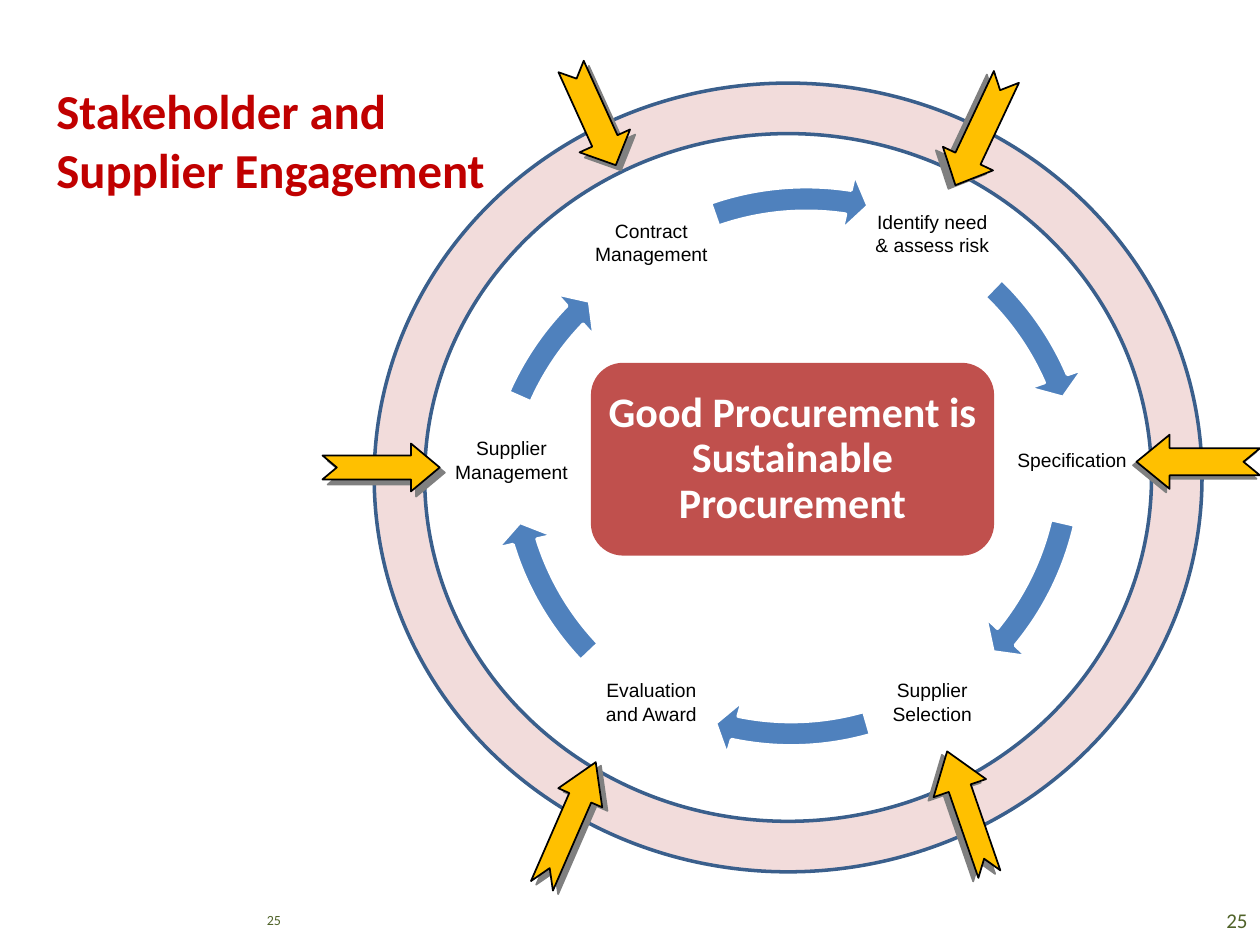
from lxml.etree import SubElement
from pptx import Presentation
from pptx.dml.color import RGBColor
from pptx.enum.shapes import MSO_SHAPE
from pptx.enum.text import MSO_ANCHOR, PP_ALIGN
from pptx.oxml.ns import qn
from pptx.util import Inches, Pt

TITLE = "Stakeholder and\vSupplier Engagement"
CORE_MESSAGE = "Good Procurement is Sustainable Procurement"
PAGE_NUMBER = "25"

STAGES = [
    ("Identify need & assess risk", 6.9, 1.35),
    ("Specification", 8.01, 3.15),
    ("Supplier Selection", 6.9, 5.07),
    ("Evaluation and Award", 4.67, 5.07),
    ("Supplier Management", 3.56, 3.15),
    ("Contract Management", 4.67, 1.42),
]
CYCLE_ARROWS = [
    (3.91, 1.44, 4.88, 202, 188.37),
    (3.84, 1.21, 4.88, 23.66, 7.77),
    (3.87, 1.23, 4.82, 61.1, 44.39),
    (3.84, 1.21, 4.88, 97.73, 81.84),
    (3.71, 1.6, 4.88, 134.48, 122.22),
    (3.96, 1.35, 4.88, 167.19, 150.45),
]
ENGAGEMENT_ARROWS = [
    ((2.56, 3.52, 0.93, 0.38), 0, (0.5, 0.6), 4.2, 45),
    ((4.28, 0.7, 0.86, 0.44), 65.6, (0.5, 0.48), 4.2, 45),
    ((7.31, 0.82, 0.95, 0.44), 115.2, (0.5, 0.53), 4.5, 153),
    ((9.02, 3.45, 0.98, 0.43), 180, (0.5, 0.61), 2.8, 135),
    ((7.17, 6.23, 1.03, 0.44), 251, (0.42, 0.7), 3.6, 146),
    ((3.98, 6.35, 1.07, 0.38), 293.5, (0.5, 0.81), 3.6, 34),
]

TITLE_FORMAT = {"name": "Calibri", "size": Pt(27.9), "bold": True}
CORE_FORMAT = {"name": "Calibri", "size": Pt(24), "bold": True}
STAGE_FORMAT = {"name": "Arial", "size": Pt(11)}
PAGE_FORMAT = {"name": "Calibri", "size": Pt(12)}
SMALL_PAGE_FORMAT = {"name": "Calibri", "size": Pt(8)}


def color(hex_value):
    return RGBColor.from_string(hex_value)


def write_text(shape, text, font_format, text_color, align, margins):
    frame = shape.text_frame
    horizontal, vertical = map(Inches, margins)
    frame_format = {
        "word_wrap": True,
        "vertical_anchor": MSO_ANCHOR.MIDDLE,
        "margin_left": horizontal,
        "margin_right": horizontal,
        "margin_top": vertical,
        "margin_bottom": vertical,
    }
    for name, value in frame_format.items():
        setattr(frame, name, value)
    paragraph = frame.paragraphs[0]
    paragraph.text = text
    paragraph.alignment = align
    for name, value in font_format.items():
        setattr(paragraph.font, name, value)
    paragraph.font.color.rgb = color(text_color)
    return paragraph


def add_text(slide, box, *text_options):
    shape = slide.shapes.add_textbox(*map(Inches, box))
    write_text(shape, *text_options)


def add_shape(slide, kind, box, fill, adjustments, line=None, width=1):
    shape = slide.shapes.add_shape(kind, *map(Inches, box))
    shape.shadow.inherit = False
    shape.fill.solid()
    shape.fill.fore_color.rgb = color(fill)
    for index, value in enumerate(adjustments):
        shape.adjustments[index] = value
    if line:
        shape.line.color.rgb = color(line)
        shape.line.width = Pt(width)
    else:
        shape.line.fill.background()
    return shape


def add_hard_shadow(shape, distance, angle):
    effects = shape._element.spPr.find(qn("a:effectLst"))
    shadow = SubElement(effects, qn("a:outerShdw"), {
        "dist": str(int(Pt(distance))),
        "dir": str(angle * 60000),
        "algn": "ctr",
        "rotWithShape": "0",
    })
    SubElement(shadow, qn("a:srgbClr"), val="808080")


def main():
    presentation = Presentation()
    presentation.slide_width = Inches(10)
    presentation.slide_height = Inches(7.5)
    slide = presentation.slides.add_slide(presentation.slide_layouts[6])

    add_text(slide, (9.24, 7.1, 0.76, 0.4), PAGE_NUMBER, PAGE_FORMAT,
             "4F6228", PP_ALIGN.RIGHT, (0.1, 0.05))
    add_text(slide, (0.35, 0.59, 4.66, 1.03), TITLE, TITLE_FORMAT,
             "C00000", PP_ALIGN.LEFT, (0.1, 0))
    add_text(slide, (0, 7.1, 2.33, 0.4), PAGE_NUMBER, SMALL_PAGE_FORMAT,
             "4F6228", PP_ALIGN.RIGHT, (0.1, 0.05))

    add_shape(slide, MSO_SHAPE.DONUT, (2.97, 0.66, 6.57, 6.26),
              "F2DCDB", (0.064,), "3A5F8C", 2)

    for (label, left, top), arrow in zip(STAGES, CYCLE_ARROWS):
        add_text(slide, (left, top, 1, 1), label, STAGE_FORMAT,
                 "000000", PP_ALIGN.CENTER, (0.02, 0.02))
        arrow_left, arrow_top, size, end, start = arrow
        add_shape(slide, MSO_SHAPE.CIRCULAR_ARROW, (arrow_left, arrow_top, size, size),
                  "4F81BD", (0.04, 2.5, end, start, 0.047), "FFFFFF", 2)

    core = add_shape(slide, MSO_SHAPE.ROUNDED_RECTANGLE, (4.69, 2.88, 3.2, 1.53),
                     "C0504D", (0.167,))
    paragraph = write_text(core, CORE_MESSAGE, CORE_FORMAT, "FFFFFF",
                           PP_ALIGN.CENTER, (0.06, 0.06))
    paragraph.line_spacing = 0.9

    for box, rotation, adjustments, distance, angle in ENGAGEMENT_ARROWS:
        arrow = add_shape(slide, MSO_SHAPE.NOTCHED_RIGHT_ARROW, box,
                          "FFC000", adjustments, "000000")
        arrow.rotation = rotation
        add_hard_shadow(arrow, distance, angle)

    presentation.save("out.pptx")


if __name__ == "__main__":
    main()
